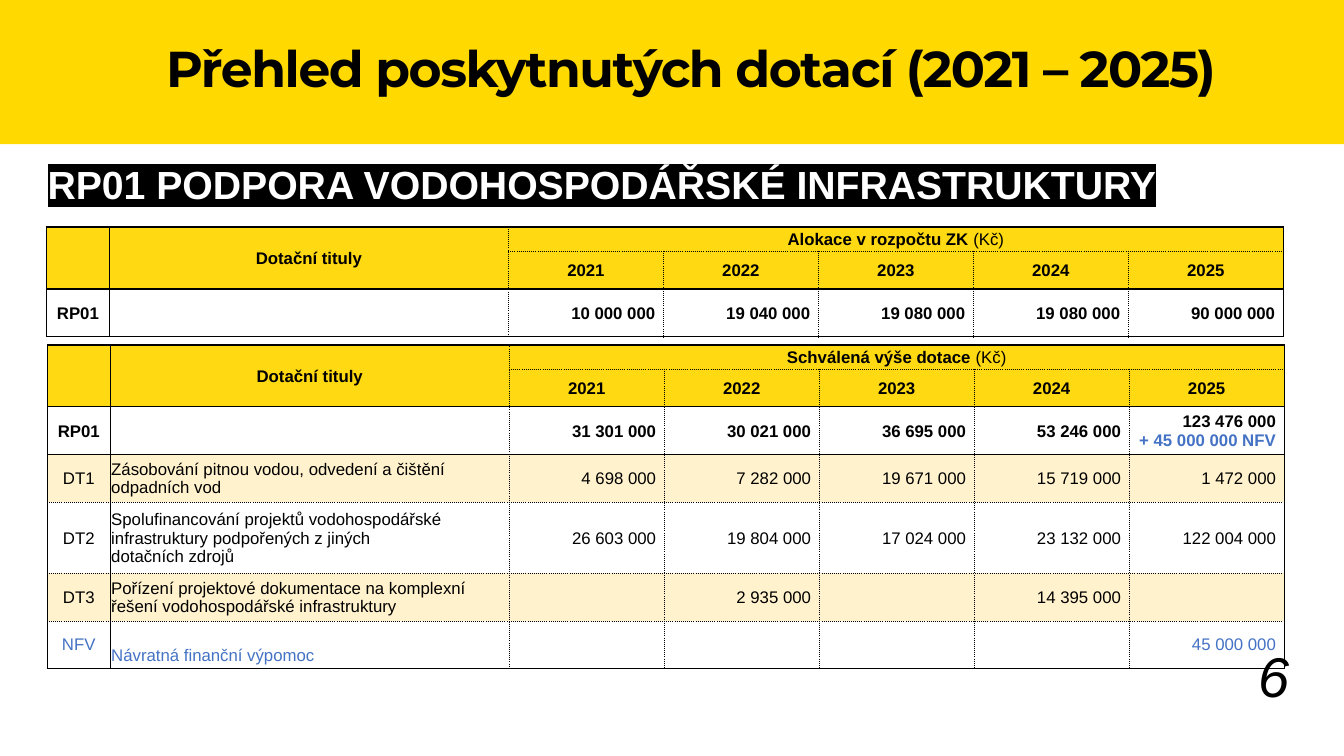
from lxml import etree
from pptx import Presentation
from pptx.dml.color import RGBColor
from pptx.enum.shapes import MSO_SHAPE
from pptx.enum.text import MSO_ANCHOR, PP_ALIGN
from pptx.oxml.ns import qn
from pptx.util import Pt

RECT = MSO_SHAPE.RECTANGLE
TOP, MID, LOW = MSO_ANCHOR.TOP, MSO_ANCHOR.MIDDLE, MSO_ANCHOR.BOTTOM
LEFT, CENTER, RIGHT = PP_ALIGN.LEFT, PP_ALIGN.CENTER, PP_ALIGN.RIGHT
HUES = {"band": "FFD900", "head": "FFD911", "cream": "FFF2CC",
        "ink": "000000", "white": "FFFFFF", "blue": "4472C4"}
SOLID, DOT, FINE = (1, "solid"), (0.5, "dot"), (0.25, "sysDot")
COLS = [45, 285] + [110.7] * 5
YEARS = ["2021", "2022", "2023", "2024", "2025"]


class Deck:
    """Holds the style and the current slide, and draws each kind of element."""

    def __init__(self):
        self.prs = Presentation()
        self.prs.slide_width, self.prs.slide_height = Pt(960), Pt(540)
        self.slide = self.prs.slides.add_slide(self.prs.slide_layouts[6])
        self.font = "Arial"

    def hue(self, name):
        return RGBColor.from_string(HUES[name])

    def style(self, run, size, color="ink", bold=False, font=None):
        run.font.size = Pt(size)
        run.font.name = font or self.font
        run.font.bold = bold
        run.font.color.rgb = self.hue(color)

    def rect(self, x, y, w, h, color):
        box = self.slide.shapes.add_shape(RECT, Pt(x), Pt(y), Pt(w), Pt(h))
        box.shadow.inherit = False
        box.fill.solid()
        box.fill.fore_color.rgb = self.hue(color)
        box.line.fill.background()

    def text(self, words, x, y, w, h, size, color="ink", bold=False, font=None,
             align=LEFT, anchor=TOP, pad=(7.2, 3.6, 7.2, 3.6)):
        box = self.slide.shapes.add_textbox(Pt(x), Pt(y), Pt(w), Pt(h))
        frame = box.text_frame
        frame.word_wrap = True
        frame.vertical_anchor = anchor
        self.inset(frame, pad)
        frame.text = words
        line = frame.paragraphs[0]
        line.alignment = align
        self.style(line.runs[0], size, color, bold, font)
        return line

    def inset(self, item, pad):
        (item.margin_left, item.margin_top,
         item.margin_right, item.margin_bottom) = map(Pt, pad)

    def mark(self, run, color):
        tag = etree.Element(qn("a:highlight"))
        etree.SubElement(tag, qn("a:srgbClr"), val=HUES[color])
        run.font.fill._xPr.find(qn("a:solidFill")).addnext(tag)

    def edge(self, cell, side, kind):
        width, dash = kind
        line = etree.SubElement(cell._tc.get_or_add_tcPr(), qn("a:ln" + side),
                                w=str(Pt(width)))
        fill = etree.SubElement(line, qn("a:solidFill"))
        etree.SubElement(fill, qn("a:srgbClr"), val=HUES["ink"])
        etree.SubElement(line, qn("a:prstDash"), val=dash)

    def frame(self, cell, row, col, last):
        end = row + cell.span_height - 1
        stop = col + cell.span_width - 1
        top = SOLID if row in (0, 2, 3) else FINE if row == 1 else DOT
        low = SOLID if end in (1, 2, last) else FINE if end == 0 else DOT
        self.edge(cell, "L", SOLID if col < 2 else DOT)
        self.edge(cell, "R", SOLID if stop in (0, 6) else DOT)
        self.edge(cell, "T", top)
        self.edge(cell, "B", low)

    def fill(self, cell, words, row, col):
        frame = cell.text_frame
        frame.text = words
        color = "blue" if row == 6 else "ink"
        for line in frame.paragraphs:
            if row > 1 and col != 1:
                line.alignment = RIGHT if col > 1 else CENTER
            elif row < 2:
                line.alignment = CENTER
            for run in line.runs:
                self.style(run, 12, color, row < 3)
            if not line.runs:
                etree.SubElement(line._p, qn("a:endParaRPr"), sz="1200")

    def table(self, title, body, x, y, rows):
        data = [["", "Dotační tituly", title] + [""] * 4, ["", ""] + YEARS] + body
        last = len(rows) - 1
        item = self.slide.shapes.add_table(len(rows), len(COLS), Pt(x), Pt(y),
                                           Pt(sum(COLS)), Pt(sum(rows)))
        grid = item.table
        grid.first_row = grid.horz_banding = False
        for col, width in enumerate(COLS):
            grid.columns[col].width = Pt(width)
        for row, height in enumerate(rows):
            grid.rows[row].height = Pt(height)
        for col in (0, 1):
            grid.cell(0, col).merge(grid.cell(1, col))
        grid.cell(0, 2).merge(grid.cell(0, 6))
        for row, words in enumerate(data):
            for col, word in enumerate(words):
                cell = grid.cell(row, col)
                cell.vertical_anchor = MID
                self.inset(cell, (0.7, 0.7, 5.8 if row > 1 and col > 1 else 0.7, 0))
                self.fill(cell, word, row, col)
                if not cell.is_spanned:
                    self.frame(cell, row, col, last)
                if row < 2 or row in (3, 5):
                    cell.fill.solid()
                    cell.fill.fore_color.rgb = self.hue("head" if row < 2 else "cream")
                else:
                    cell.fill.background()
        unit = grid.cell(0, 2).text_frame.paragraphs[0].add_run()
        unit.text = " (Kč)"
        self.style(unit, 12)
        return grid


def main():
    deck = Deck()
    deck.rect(0, 0, 960, 103, "band")
    grid = deck.table("Schválená výše dotace", [
        ["RP01", "", "31 301 000", "30 021 000", "36 695 000", "53 246 000",
         "123 476 000\n+ 45 000 000 NFV"],
        ["DT1", "Zásobování pitnou vodou, odvedení a čištění odpadních vod",
         "4 698 000", "7 282 000", "19 671 000", "15 719 000", "1 472 000"],
        ["DT2", "Spolufinancování projektů vodohospodářské infrastruktury "
         "podpořených z jiných \vdotačních zdrojů",
         "26 603 000", "19 804 000", "17 024 000", "23 132 000", "122 004 000"],
        ["DT3", "Pořízení projektové dokumentace na komplexní řešení "
         "vodohospodářské infrastruktury", "", "2 935 000", "", "14 395 000", ""],
        ["NFV", "Návratná finanční výpomoc", "", "", "", "", "45 000 000"],
    ], 33.8, 246.4, [17.1, 27.1, 34.1, 33.9, 51.1, 33.9, 33.9])
    extra = grid.cell(2, 6).text_frame.paragraphs[1].runs[0]
    extra.font.color.rgb = deck.hue("blue")
    loan = grid.cell(6, 1)
    loan.vertical_anchor = LOW
    loan.margin_bottom = Pt(2)
    deck.table("Alokace v rozpočtu ZK", [
        ["RP01", "", "10 000 000", "19 040 000", "19 080 000", "19 080 000",
         "90 000 000"],
    ], 33.2, 162.2, [17.1, 27.1, 34.1])
    line = deck.text("RP01 PODPORA VODOHOSPODÁŘSKÉ INFRASTRUKTURY", 0, 103.7, 960,
                     53.3, 28, "white", True, pad=(34, 10.5, 7.2, 3.6))
    deck.mark(line.runs[0], "ink")
    line = deck.text("Přehled poskytnutých dotací (2021 – 2025)", 0, 0, 960, 102.2,
                     36, "ink", True, "Montserrat", CENTER, MID,
                     (34, 3.6, 7.2, 3.6))
    line.line_spacing = 0.9
    line.runs[0].font._element.set("spc", "-100")
    line = deck.text("6", 712, 468.7, 216, 41, 40, align=RIGHT, anchor=LOW)
    line.runs[0].font.italic = True
    deck.prs.save("out.pptx")


if __name__ == "__main__":
    main()
